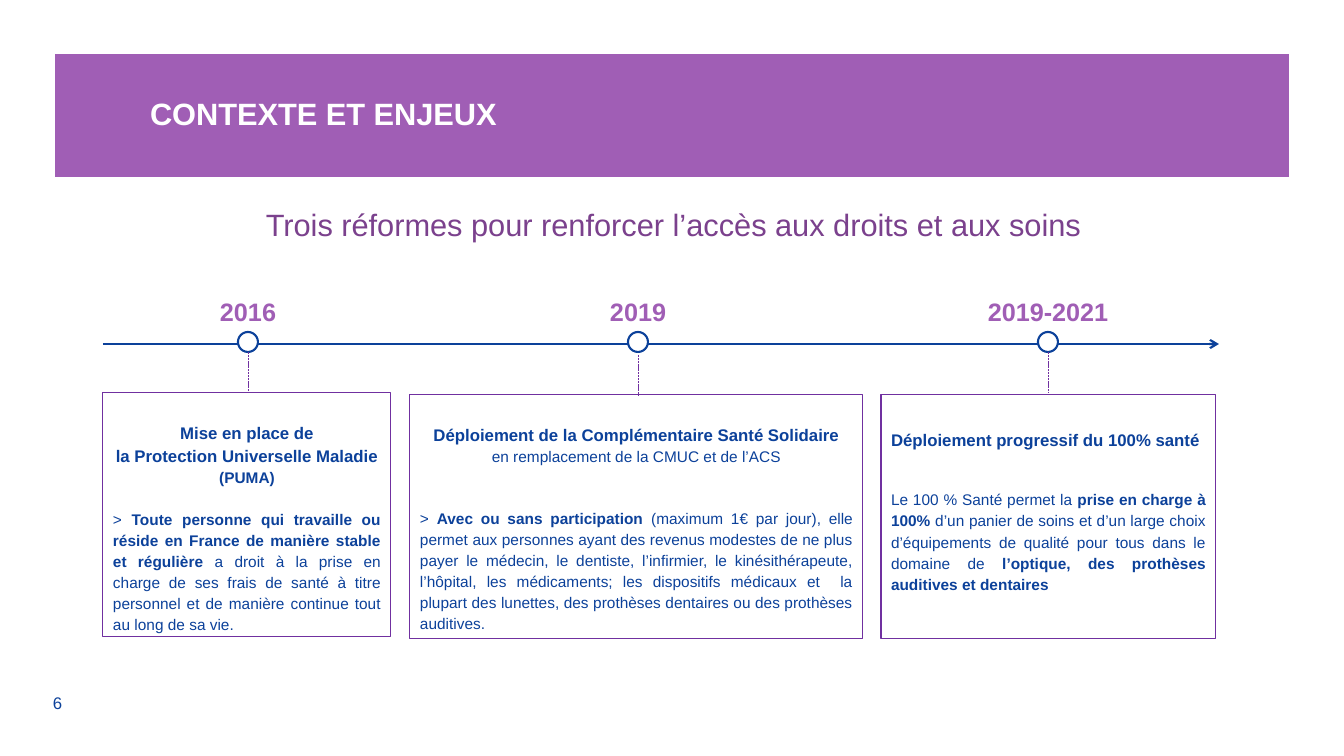
import dataclasses

import lxml.etree
import pptx
import pptx.dml.color
import pptx.enum.dml
import pptx.enum.shapes
import pptx.enum.text
import pptx.oxml.ns
import pptx.util

SHAPES = pptx.enum.shapes.MSO_SHAPE
ALIGN = pptx.enum.text.PP_ALIGN
ANCHOR = pptx.enum.text.MSO_ANCHOR
EMU_PER_PX = 914400 / 100.8


@dataclasses.dataclass(frozen=True)
class Theme:
    font: str = "Arial"
    white: str = "FFFFFF"
    navy: str = "0C419A"
    banner: str = "A05EB5"
    plum: str = "7B418D"
    outline: str = "7030A0"
    title: int = 22
    year: int = 18
    heading: int = 12
    body: int = 11
    spacing: float = 1.14


THEME = Theme()

# Timeline geometry, in px
AXIS_Y, RING, RING_TOP = 344, 20, 332
YEAR_TOP, YEAR_WIDTH, YEAR_HEIGHT = 291, 155, 40
CARD_HEIGHT = 244


def px(length):
    return pptx.util.Emu(round(length * EMU_PER_PX))


def rgb(colour):
    return pptx.dml.color.RGBColor.from_string(colour)


def add_box(page, left, top, width, height, shape=None, fill=None, line=None, weight=0.75):
    """Add a preset shape, or a text box when no shape is named."""
    place = [px(length) for length in (left, top, width, height)]
    if shape is None:
        return page.shapes.add_textbox(*place)
    box = page.shapes.add_shape(shape, *place)
    box.shadow.inherit = False
    if fill:
        box.fill.solid()
        box.fill.fore_color.rgb = rgb(fill)
    else:
        box.fill.background()
    if line:
        box.line.color.rgb = rgb(line)
        box.line.width = pptx.util.Pt(weight)
    else:
        box.line.fill.background()
    return box


def set_frame(box, anchor=ANCHOR.TOP, left=10, top=5):
    frame = box.text_frame
    frame.word_wrap = True
    frame.vertical_anchor = anchor
    frame.margin_left, frame.margin_top = px(left), px(top)
    return frame


def add_text(frame, spans, size, colour=THEME.navy, align=ALIGN.LEFT, spacing=1.0, before=0):
    """Add a paragraph of (text, bold) or (text, bold, size) spans."""
    first = frame.paragraphs[0]
    para = frame.add_paragraph() if first.runs else first
    para.alignment = align
    para.line_spacing = spacing
    if before:
        para.space_before = pptx.util.Pt(before)
    for text, bold, *own_size in spans:
        span = para.add_run()
        span.text = text
        span.font.name = THEME.font
        span.font.size = pptx.util.Pt(own_size[0] if own_size else size)
        span.font.bold = bold
        span.font.color.rgb = rgb(colour)


def add_line(page, start, end, colour, weight, dash=None, arrow=False):
    line = page.shapes.add_connector(
        pptx.enum.shapes.MSO_CONNECTOR.STRAIGHT, *map(px, start + end))
    line.line.color.rgb = rgb(colour)
    line.line.width = pptx.util.Pt(weight)
    if dash:
        line.line.dash_style = dash
    qn = pptx.oxml.ns.qn
    if arrow:
        lxml.etree.SubElement(line.line._get_or_add_ln(), qn("a:tailEnd"), type="arrow")
    lxml.etree.SubElement(line._element.spPr, qn("a:effectLst"))


def add_milestone(page, year, centre, stem_top, card, inset, paras):
    """Add a card with its year, ring and dotted stem."""
    left, top, width = card
    box = add_box(page, left, top, width, CARD_HEIGHT, SHAPES.RECTANGLE, line=THEME.outline)
    frame = set_frame(box, top=inset)
    for spans, style in paras:
        add_text(frame, spans, **style)
    add_box(page, centre - RING // 2, RING_TOP, RING, RING, SHAPES.OVAL,
            fill=THEME.white, line=THEME.navy, weight=1.5)
    label = add_box(page, centre - YEAR_WIDTH / 2, YEAR_TOP, YEAR_WIDTH, YEAR_HEIGHT)
    add_text(set_frame(label), [(year, True)], THEME.year, THEME.banner, ALIGN.CENTER)
    add_line(page, (centre, stem_top), (centre, stem_top + 41), THEME.outline, 0.5,
             dash=pptx.enum.dml.MSO_LINE.SQUARE_DOT)


def main():
    deck = pptx.Presentation()
    deck.slide_width, deck.slide_height = px(1344), px(756)
    page = deck.slides.add_slide(deck.slide_layouts[6])

    # Banner, subtitle and page number
    banner = add_box(page, 55, 54, 1234, 123, SHAPES.RECTANGLE, fill=THEME.banner)
    add_text(set_frame(banner, ANCHOR.MIDDLE, left=95), [("CONTEXTE ET ENJEUX", True)],
             THEME.title, THEME.white, spacing=0.9)
    subtitle = add_box(page, 58, 196, 1231, 50)
    add_text(set_frame(subtitle),
             [("Trois réformes pour renforcer l’accès aux droits et aux soins", False)],
             THEME.title, THEME.plum, ALIGN.CENTER, THEME.spacing)
    number = add_box(page, 43, 687, 80, 31)
    add_text(set_frame(number, ANCHOR.MIDDLE), [("6", False)], THEME.heading)

    # Time axis
    add_line(page, (103, AXIS_Y), (1219, AXIS_Y), THEME.navy, 1.5, arrow=True)

    # Milestones
    heading = dict(size=THEME.heading, align=ALIGN.CENTER, spacing=THEME.spacing)
    body = dict(size=THEME.body, align=ALIGN.JUSTIFY, spacing=THEME.spacing)
    add_milestone(page, "2016", 248, 352, (103, 393, 288), 27, [
        ([("Mise en place de", True)], heading),
        ([("la Protection Universelle Maladie ", True), ("(PUMA)", True, THEME.body)], heading),
        ([("> ", False),
          ("Toute personne qui travaille ou réside en France de manière stable "
           "et régulière ", True),
          ("a droit à la prise en charge de ses frais de santé à titre personnel "
           "et de manière continue tout au long de sa vie.", False)],
         dict(body, before=14.4)),
    ])
    add_milestone(page, "2019", 638, 355, (410, 395, 453), 27, [
        ([("Déploiement de la Complémentaire Santé Solidaire", True)], heading),
        ([("en remplacement de la CMUC et de l’ACS", False)], dict(heading, size=THEME.body)),
        ([("> ", False), ("Avec ou sans participation ", True),
          ("(maximum 1€ par jour), elle permet aux personnes ayant des revenus modestes "
           "de ne plus payer le médecin, le dentiste, l’infirmier, le kinésithérapeute, "
           "l’hôpital, les médicaments; les dispositifs médicaux et  la plupart des "
           "lunettes, des prothèses dentaires ou des prothèses auditives.", False)],
         dict(body, before=28.8)),
    ])
    add_milestone(page, "2019-2021", 1048, 352, (881, 395, 335), 35, [
        ([("Déploiement progressif du 100% santé", True)], dict(size=THEME.heading)),
        ([("Le 100 % Santé permet la ", False), ("prise en charge à 100%", True),
          (" d’un panier de soins et d’un large choix d’équipements de qualité pour tous "
           "dans le domaine de ", False),
          ("l’optique, des prothèses auditives et dentaires", True)],
         dict(body, before=27)),
    ])

    deck.save("out.pptx")


if __name__ == "__main__":
    main()
